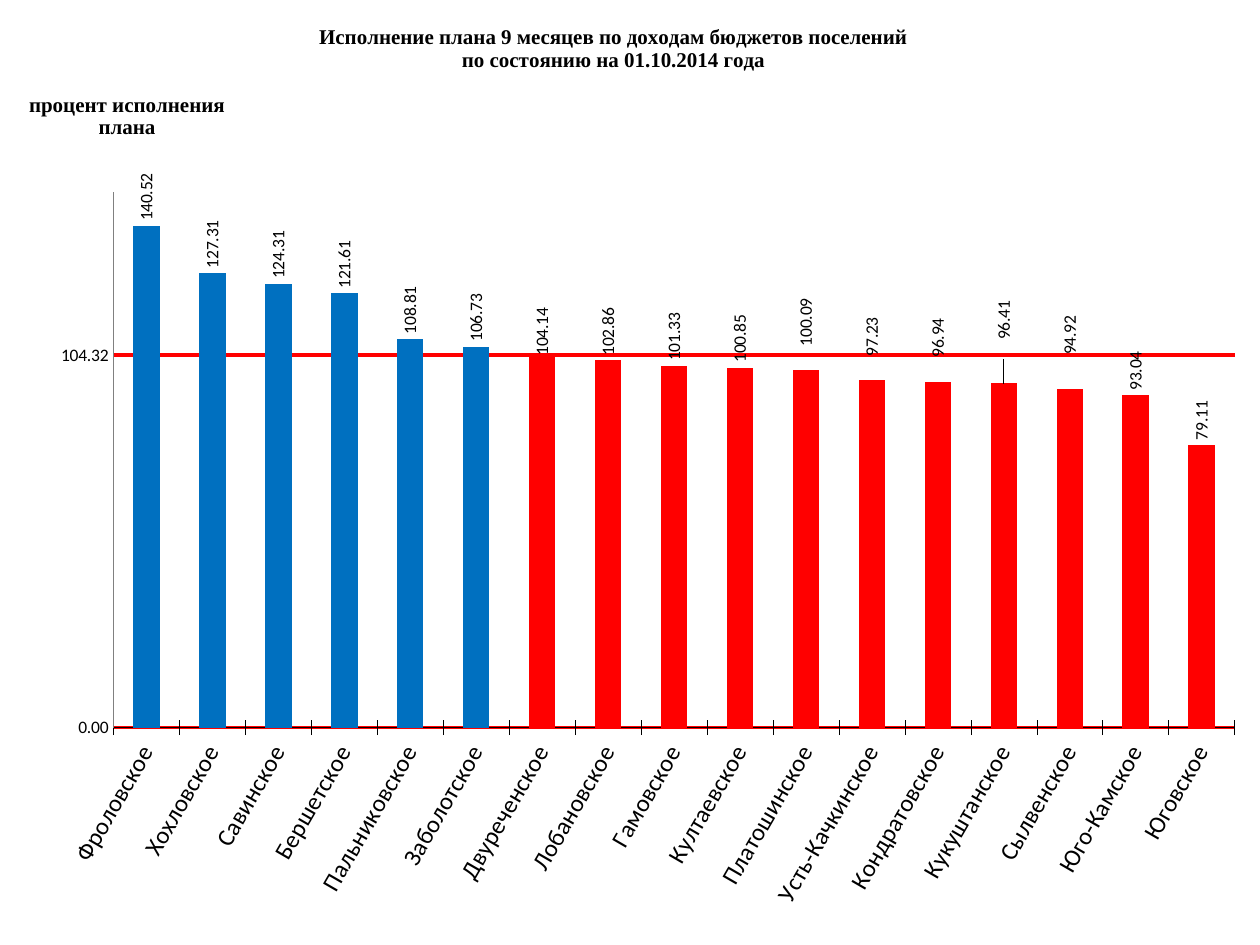
import copy

import pptx
import pptx.chart.data
import pptx.dml.color
import pptx.enum.chart
import pptx.oxml
import pptx.oxml.ns
import pptx.util
from pptx.util import Pt

COLORS = {"above": "0070C0", "below": "FF0000", "text": "000000", "axis": "808080"}
PLAN = 104.32
execution = {
    "Фроловское": 140.52, "Хохловское": 127.31, "Савинское": 124.31,
    "Бершетское": 121.61, "Пальниковское": 108.81, "Заболотское": 106.73,
    "Двуреченское": 104.14, "Лобановское": 102.86, "Гамовское": 101.33,
    "Култаевское": 100.85, "Платошинское": 100.09, "Усть-Качкинское": 97.23,
    "Кондратовское": 96.94, "Кукуштанское": 96.41, "Сылвенское": 94.92,
    "Юго-Камское": 93.04, "Юговское": 79.11,
}
# Vertical label shifts as shares of the chart height
label_shifts = {
    "Двуреченское": 0.005, "Платошинское": -0.02, "Усть-Качкинское": -0.02,
    "Кондратовское": -0.02, "Кукуштанское": -0.04, "Сылвенское": -0.03,
}


def rgb(name):
    return pptx.dml.color.RGBColor.from_string(COLORS[name])


def set_layout(parent, index, **values):
    """Give a chart part a manual layout, in shares of the chart size."""
    for old in parent.findall(pptx.oxml.ns.qn("c:layout")):
        parent.remove(old)
    items = "".join(f'<c:{tag} val="{value}"/>' for tag, value in values.items())
    parent.insert(index, pptx.oxml.parse_xml(
        f'<c:layout {pptx.oxml.ns.nsdecls("c")}><c:manualLayout>{items}'
        "</c:manualLayout></c:layout>"))


presentation = pptx.Presentation()
presentation.slide_width, presentation.slide_height = Pt(720), Pt(540)
slide = presentation.slides.add_slide(presentation.slide_layouts[6])

chart_data = pptx.chart.data.CategoryChartData(number_format="0.00")
chart_data.categories = list(execution)
chart_data.add_series("Процент исполнения", list(execution.values()))
chart = slide.shapes.add_chart(
    pptx.enum.chart.XL_CHART_TYPE.COLUMN_CLUSTERED,
    Pt(0), Pt(-5), Pt(720.7), Pt(549.4), chart_data).chart
chart.has_legend = False
chart.font.name, chart.font.size = "Calibri", Pt(10)
chart.font.color.rgb = rgb("text")

# Axes
settlements, percent = chart.category_axis, chart.value_axis
settlements.tick_labels.font.size = Pt(14)
settlements.tick_labels.font.name = "Calibri"
settlements.tick_labels.font.color.rgb = rgb("text")
settlements.major_tick_mark = pptx.enum.chart.XL_TICK_MARK.CROSS
settlements.format.line.color.rgb = rgb("text")
settlements.format.line.width = Pt(0.25)
settlements_body = settlements._element.find(".//" + pptx.oxml.ns.qn("a:bodyPr"))
settlements_body.set("rot", "-3600000")
settlements_body.set("vert", "horz")

percent.minimum_scale, percent.maximum_scale = 0, 150
percent.major_unit = PLAN
percent.major_tick_mark = pptx.enum.chart.XL_TICK_MARK.NONE
percent.tick_labels.number_format = "0.00"
percent.tick_labels.number_format_is_linked = False
percent.format.line.color.rgb = rgb("axis")
percent.format.line.width = Pt(0.25)
percent.major_gridlines.format.line.color.rgb = rgb("below")
percent.major_gridlines.format.line.width = Pt(2)

# Titles
headings = [
    (chart.chart_title, 0.25, 0.03,
     "Исполнение плана 9 месяцев по доходам бюджетов поселений\n"
     "по состоянию на 01.10.2014 года"),
    (percent.axis_title, 0.02, 0.1, "процент исполнения\nплана"),
]
for heading, left, top, wording in headings:
    frame = heading.text_frame
    frame.text = wording
    for paragraph in frame.paragraphs:
        paragraph.font.name, paragraph.font.size = "Times New Roman", Pt(12)
        paragraph.font.bold = True
        paragraph.font.color.rgb = rgb("text")
    body = frame._txBody.find(pptx.oxml.ns.qn("a:bodyPr"))
    body.set("rot", "0")
    body.set("vert", "horz")
    set_layout(heading._element, 1, xMode="edge", yMode="edge", x=left, y=top)
for paragraph in percent.axis_title.text_frame.paragraphs:
    paragraph.line_spacing = 2.0

# Columns
plot = chart.plots[0]
plot.gap_width = 150
plot.vary_by_categories = False
set_layout(chart._chartSpace.chart.plotArea, 0, layoutTarget="inner",
           xMode="edge", yMode="edge", x=0.09, y=0.209, w=0.889, h=0.557)
columns = plot.series[0]
for index, value in enumerate(execution.values()):
    fill = columns.points[index].format.fill
    fill.solid()
    fill.fore_color.rgb = rgb("above" if value > PLAN else "below")

# Column labels
labels = columns.data_labels
labels.show_value = True
labels.position = pptx.enum.chart.XL_LABEL_POSITION.OUTSIDE_END
labels.number_format, labels.number_format_is_linked = "0.00", False
labels.font.name, labels.font.size = "Calibri", Pt(10)
labels.font.color.rgb = rgb("text")
labels_body = labels._element.find(".//" + pptx.oxml.ns.qn("a:bodyPr"))
labels_body.set("rot", "-5400000")
labels_body.set("vert", "horz")
shared = [part for part in labels._element
          if part.tag != pptx.oxml.ns.qn("c:showLeaderLines")]
for position, (settlement, shift) in enumerate(label_shifts.items()):
    index = list(execution).index(settlement)
    label = pptx.oxml.parse_xml(
        f'<c:dLbl {pptx.oxml.ns.nsdecls("c")}><c:idx val="{index}"/></c:dLbl>')
    set_layout(label, 1, x=0, y=shift)
    label.extend(copy.deepcopy(part) for part in shared)
    labels._element.insert(position, label)

presentation.save("out.pptx")
